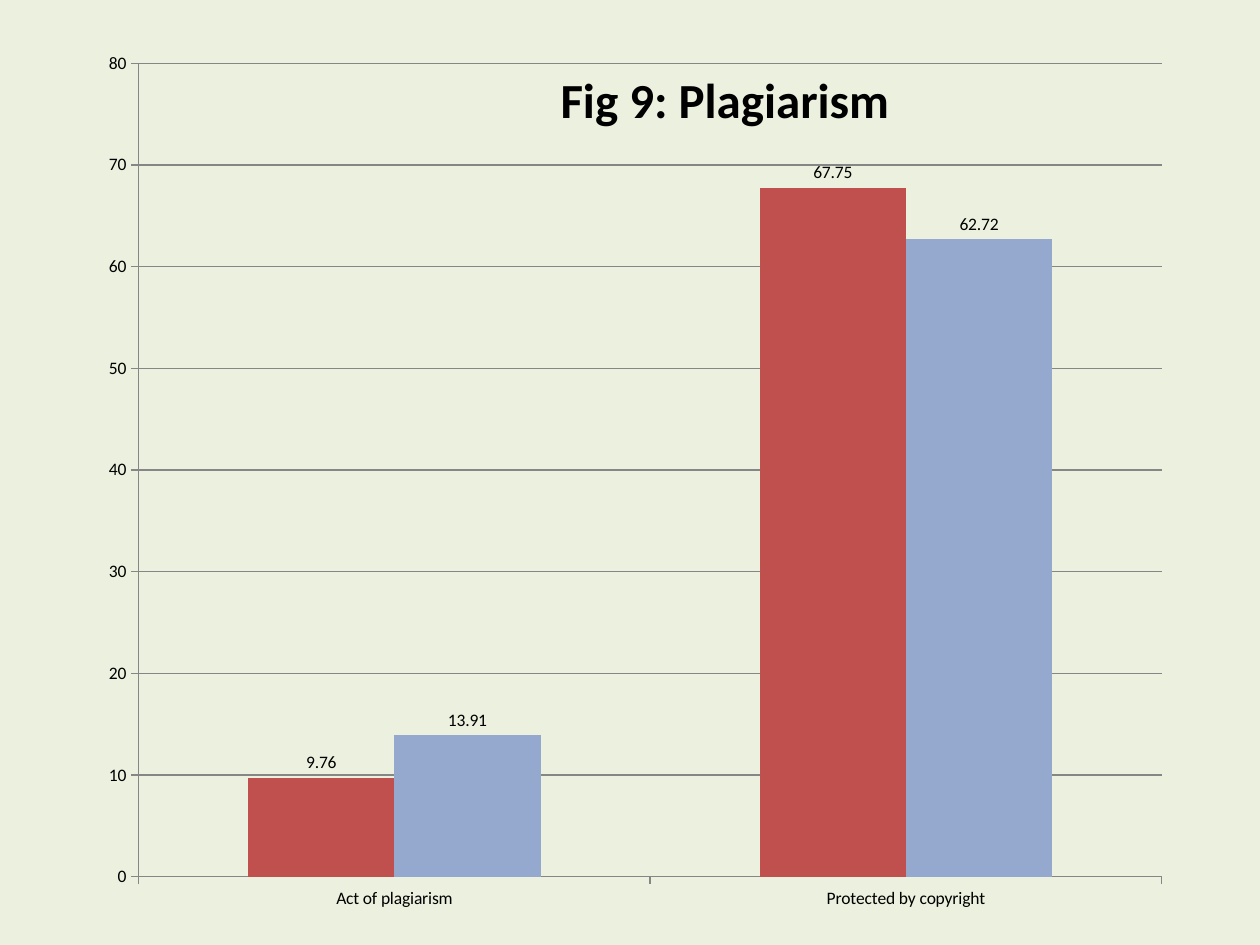
from lxml import etree
from pptx import Presentation
from pptx.chart.data import CategoryChartData
from pptx.dml.color import RGBColor
from pptx.enum.chart import XL_CHART_TYPE as ChartType
from pptx.enum.chart import XL_LABEL_POSITION as LabelPosition
from pptx.enum.chart import XL_TICK_MARK as TickMark
from pptx.enum.text import MSO_ANCHOR as Anchor
from pptx.enum.text import PP_ALIGN as Align
from pptx.oxml import parse_xml
from pptx.util import Cm, Pt

CHART_NS = "http://schemas.openxmlformats.org/drawingml/2006/chart"
DRAWING_NS = "http://schemas.openxmlformats.org/drawingml/2006/main"


def color(hex_string):
    return RGBColor.from_string(hex_string)


def write_text(shape, text, size=18, bold=False, font="Calibri", fill="000000",
               align=Align.CENTER):
    frame = shape.text_frame
    frame.word_wrap = True
    frame.vertical_anchor = Anchor.TOP
    paragraph = frame.paragraphs[0]
    paragraph.alignment = align
    run = paragraph.add_run()
    run.text = text
    run.font.size = Pt(size)
    run.font.bold = bold
    run.font.name = font
    run.font.color.rgb = color(fill)


presentation = Presentation()
presentation.slide_width = Cm(25.4)
presentation.slide_height = Cm(19.05)
slide = presentation.slides.add_slide(presentation.slide_layouts[5])

# Chart filling the slide
data = CategoryChartData(number_format="0.00")
data.categories = ["Act of plagiarism", "Protected by copyright"]
data.add_series("Series 1", (9.76, 67.75))
data.add_series("Series 2", (13.91, 62.72))
chart_frame = slide.shapes.add_chart(
    ChartType.COLUMN_CLUSTERED, Cm(0), Cm(0),
    presentation.slide_width, presentation.slide_height, data)
chart = chart_frame.chart
chart.has_title = False
chart.has_legend = False
chart.font.name = "Calibri"
chart.font.size = Pt(10)
chart.font.color.rgb = color("000000")

# Columns and their value labels
plot = chart.plots[0]
plot.gap_width = 150
plot.overlap = 0
plot.vary_by_categories = False
for series, fill in zip(plot.series, ("C0504D", "95A9CF")):
    series.format.fill.solid()
    series.format.fill.fore_color.rgb = color(fill)
    labels = series.data_labels
    labels.show_value = True
    labels.position = LabelPosition.OUTSIDE_END

# Axes and gridlines
value_axis = chart.value_axis
value_axis.minimum_scale = 0
value_axis.maximum_scale = 80
value_axis.major_unit = 10
value_axis.has_major_gridlines = True
value_axis.tick_labels.number_format = "0"
value_axis.tick_labels.number_format_is_linked = False
for axis in (chart.category_axis, value_axis):
    axis.major_tick_mark = TickMark.OUTSIDE
    axis.minor_tick_mark = TickMark.NONE
for line in (chart.category_axis.format.line, value_axis.format.line,
             value_axis.major_gridlines.format.line):
    line.color.rgb = color("868686")
    line.width = Pt(0.75)

# Chart background
chart_element = chart.element.find(f"{{{CHART_NS}}}chart")
chart_element.addnext(parse_xml(
    f'<c:spPr xmlns:c="{CHART_NS}" xmlns:a="{DRAWING_NS}">'
    '<a:solidFill><a:srgbClr val="EBF1DE"/></a:solidFill>'
    '<a:ln><a:noFill/></a:ln></c:spPr>'))

# Fixed inner plot area
plot_area = chart_element.find(f"{{{CHART_NS}}}plotArea")
for old_layout in plot_area.findall(f"{{{CHART_NS}}}layout"):
    plot_area.remove(old_layout)
layout = etree.Element(f"{{{CHART_NS}}}layout")
manual = etree.SubElement(layout, f"{{{CHART_NS}}}manualLayout")
for tag, value in (("layoutTarget", "inner"), ("xMode", "edge"), ("yMode", "edge"),
                   ("x", "0.11"), ("y", "0.067"), ("w", "0.812"), ("h", "0.861")):
    etree.SubElement(manual, f"{{{CHART_NS}}}{tag}").set("val", value)
plot_area.insert(0, layout)

# Title, in front of the chart
title = slide.shapes.title
title.left, title.top = Cm(6.99), Cm(1.27)
title.width, title.height = Cm(15.24), Cm(1.45)
write_text(title, "Fig 9: Plagiarism", size=28, bold=True)
chart_frame.element.addnext(title.element)

presentation.save("out.pptx")
